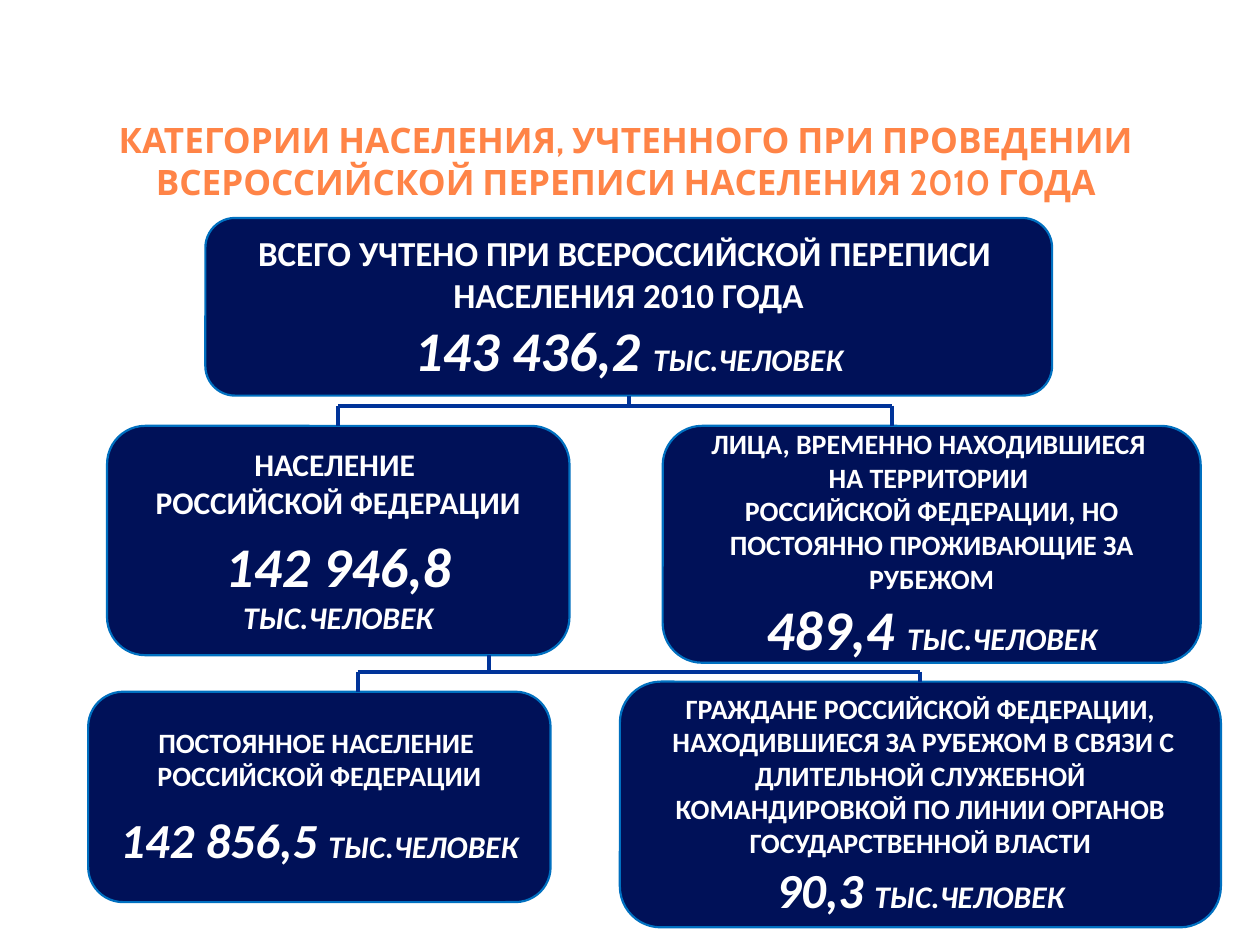
from pptx import Presentation
from pptx.dml.color import RGBColor
from pptx.enum.shapes import MSO_CONNECTOR, MSO_SHAPE
from pptx.enum.text import MSO_ANCHOR, PP_ALIGN
from pptx.oxml.ns import qn
from pptx.util import Inches, Pt
from lxml import etree

NAVY = RGBColor(0x00, 0x11, 0x58)
EDGE = RGBColor(0x00, 0x70, 0xC0)
LINE = RGBColor(0x00, 0x33, 0x99)
ORANGE = RGBColor(0xFF, 0x84, 0x47)
WHITE = RGBColor(0xFF, 0xFF, 0xFF)

TOP, BOTTOM = 0, 2
UNIT = "ТЫС.ЧЕЛОВЕК"

# box (left, top, width, height), label lines, label size, number, number size, gap
CATEGORIES = {
    "total": ((1.63, 1.73, 6.72, 1.41),
              ["ВСЕГО УЧТЕНО ПРИ ВСЕРОССИЙСКОЙ ПЕРЕПИСИ ", "НАСЕЛЕНИЯ 2010 ГОДА"],
              20, "143 436,2 ", 32, 0),
    "population": ((0.85, 3.38, 3.67, 1.82),
                   ["НАСЕЛЕНИЕ ", "РОССИЙСКОЙ ФЕДЕРАЦИИ"],
                   18, "142 946,8 ", 32, 6),
    "visitors": ((5.26, 3.38, 4.27, 1.88),
                 ["ЛИЦА, ВРЕМЕННО НАХОДИВШИЕСЯ ", "НА ТЕРРИТОРИИ ",
                  "РОССИЙСКОЙ ФЕДЕРАЦИИ, НО ПОСТОЯННО ПРОЖИВАЮЩИЕ ЗА РУБЕЖОМ"],
                 16, "489,4 ", 32, 0),
    "permanent": ((0.7, 5.49, 3.67, 1.67),
                  ["ПОСТОЯННОЕ НАСЕЛЕНИЕ ", "РОССИЙСКОЙ ФЕДЕРАЦИИ"],
                  16, "142 856,5 ", 28, 10),
    "abroad": ((4.92, 5.41, 4.77, 1.95),
               ["ГРАЖДАНЕ РОССИЙСКОЙ ФЕДЕРАЦИИ,",
                " НАХОДИВШИЕСЯ ЗА РУБЕЖОМ В СВЯЗИ С ДЛИТЕЛЬНОЙ СЛУЖЕБНОЙ "
                "КОМАНДИРОВКОЙ ПО ЛИНИИ ОРГАНОВ ГОСУДАРСТВЕННОЙ ВЛАСТИ"],
               16, "90,3 ", 28, 0),
}


def set_font(font, name, size, color):
    font.name, font.size, font.bold = name, Pt(size), True
    font.color.rgb = color


def add_title(slide, box, text):
    tf = slide.shapes.add_textbox(*map(Inches, box)).text_frame
    tf.word_wrap = True
    p = tf.paragraphs[0]
    p.text = text
    p.alignment = PP_ALIGN.CENTER
    set_font(p.font, "Cabin", 20, ORANGE)


def add_category(slide, box, lines, size, number, number_size, gap):
    """Rounded box with label lines above a figure in thousands of people."""
    sp = slide.shapes.add_shape(MSO_SHAPE.ROUNDED_RECTANGLE, *map(Inches, box))
    sp.shadow.inherit = False
    sp.fill.solid()
    sp.fill.fore_color.rgb = NAVY
    sp.line.color.rgb = EDGE
    sp.line.width = Pt(1.25)
    tf = sp.text_frame
    tf.word_wrap = True
    tf.vertical_anchor = MSO_ANCHOR.MIDDLE
    for i, line in enumerate(lines):
        p = tf.paragraphs[0] if i == 0 else tf.add_paragraph()
        p.text = line
        p.alignment = PP_ALIGN.CENTER
        set_font(p.font, "Calibri", size, WHITE)
    p = tf.add_paragraph()
    p.alignment = PP_ALIGN.CENTER
    p.space_before = Pt(gap)
    set_font(p.font, "Calibri", number_size, WHITE)
    p.font.italic = True
    for text, run_size in ((number, number_size), (UNIT, 18)):
        r = p.add_run()
        r.text = text
        r.font.size = Pt(run_size)
    return sp


def add_line(slide, start, end):
    line = slide.shapes.add_connector(MSO_CONNECTOR.STRAIGHT, *start, *end)
    line.line.color.rgb = LINE
    line.line.width = Pt(2.25)
    etree.SubElement(line._element.spPr, qn("a:effectLst"))
    return line


def add_branch(slide, parent, children, stem_x, bar_y, child_xs):
    """Stem below the parent, a bar, and one drop to each child.

    An x of None means the middle of that box, where the line is joined.
    """
    def middle(sp):
        return sp.left + sp.width // 2

    def resolve(x, sp):
        return middle(sp) if x is None else Inches(x)

    y = Inches(bar_y)
    xs = [resolve(x, child) for x, child in zip(child_xs, children)]
    add_line(slide, (xs[0], y), (xs[-1], y))

    x = resolve(stem_x, parent)
    stem = add_line(slide, (x, parent.top + parent.height), (x, y))
    if stem_x is None:
        stem.begin_connect(parent, BOTTOM)

    for given, x, child in zip(child_xs, xs, children):
        drop = add_line(slide, (x, y), (x, child.top))
        if given is None:
            drop.end_connect(child, TOP)


def main():
    prs = Presentation()
    prs.slide_width, prs.slide_height = Inches(10), Inches(7.5)
    slide = prs.slides.add_slide(prs.slide_layouts[6])

    add_title(slide, (0.14, 0.89, 9.65, 0.77),
              "КАТЕГОРИИ НАСЕЛЕНИЯ, УЧТЕННОГО ПРИ ПРОВЕДЕНИИ "
              "ВСЕРОССИЙСКОЙ ПЕРЕПИСИ НАСЕЛЕНИЯ 2010 ГОДА")
    boxes = {name: add_category(slide, *data) for name, data in CATEGORIES.items()}
    add_branch(slide, boxes["total"], (boxes["population"], boxes["visitors"]),
               None, 3.22, (None, 7.08))
    add_branch(slide, boxes["population"], (boxes["permanent"], boxes["abroad"]),
               3.88, 5.33, (2.84, None))
    prs.save("out.pptx")


if __name__ == "__main__":
    main()
